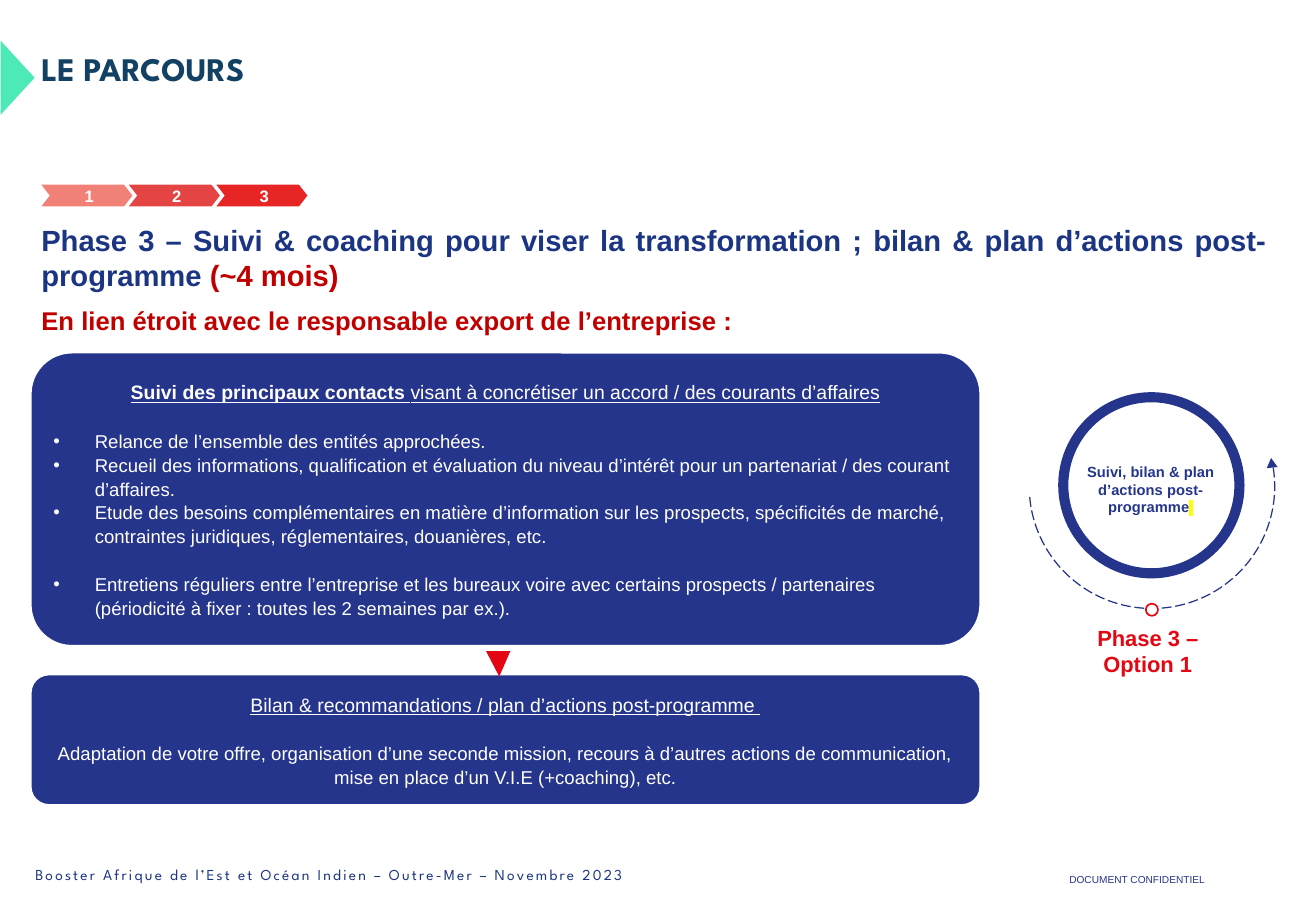
from lxml.etree import SubElement
from pptx import Presentation
from pptx.dml.color import RGBColor
from pptx.enum.dml import MSO_LINE
from pptx.enum.shapes import MSO_SHAPE
from pptx.enum.text import MSO_ANCHOR, PP_ALIGN
from pptx.oxml import parse_xml
from pptx.oxml.ns import nsdecls, qn
from pptx.util import Pt

NAVY, INK, RED, WHITE = "26358C", "1C3582", "E30613", "FFFFFF"
SPARTAN = "League Spartan"
CENTER, JUSTIFY, LEFT = PP_ALIGN.CENTER, PP_ALIGN.JUSTIFY, PP_ALIGN.LEFT


def color(value):
    return RGBColor.from_string(value)


class SlideBuilder:
    """Draw styled elements on one slide, with 100 px to the inch."""

    scale = 9144
    font_name = "Arial"

    def __init__(self, width, height):
        self.presentation = Presentation()
        self.presentation.slide_width = self.px(width)
        self.presentation.slide_height = self.px(height)
        self.slide = self.presentation.slides.add_slide(self.presentation.slide_layouts[6])

    def px(self, length):
        return length * self.scale

    def box(self, bounds):
        return [self.px(length) for length in bounds]

    def shape(self, kind, bounds, fill=None, line=None, line_width=1, adjustments=(), rotation=0):
        shape = self.slide.shapes.add_shape(kind, *self.box(bounds))
        shape.shadow.inherit = False
        shape.rotation = rotation
        for index, value in enumerate(adjustments):
            shape.adjustments[index] = value
        if fill:
            shape.fill.solid()
            shape.fill.fore_color.rgb = color(fill)
        else:
            shape.fill.background()
        if line:
            shape.line.color.rgb = color(line)
            shape.line.width = Pt(line_width)
        else:
            shape.line.fill.background()
        return shape

    def text(self, bounds, paragraphs, anchor=MSO_ANCHOR.TOP, margins=(0, 0, 0, 0)):
        textbox = self.slide.shapes.add_textbox(*self.box(bounds))
        self.fill_text(textbox, paragraphs, anchor, margins)

    def fill_text(self, shape, paragraphs, anchor=MSO_ANCHOR.MIDDLE, margins=(9, 9, 9, 9)):
        frame = shape.text_frame
        left, top, right, bottom = self.box(margins)
        frame_format = {
            "word_wrap": True, "vertical_anchor": anchor, "margin_left": left,
            "margin_top": top, "margin_right": right, "margin_bottom": bottom,
        }
        for name, value in frame_format.items():
            setattr(frame, name, value)
        for index, (runs, paragraph_format) in enumerate(paragraphs):
            paragraph = frame.add_paragraph() if index else frame.paragraphs[0]
            self.paragraph(paragraph, runs, **paragraph_format)

    def paragraph(self, paragraph, runs, bullet=False, **paragraph_format):
        if bullet:
            properties = paragraph._p.get_or_add_pPr()
            properties.set("marL", str(self.px(34)))
            properties.set("indent", str(-self.px(34)))
            SubElement(properties, qn("a:buFont")).set("typeface", self.font_name)
            SubElement(properties, qn("a:buChar")).set("char", "•")
        for name, value in paragraph_format.items():
            setattr(paragraph, name, value)
        for words, run_format in runs:
            self.run(paragraph, words, **run_format)

    def run(self, paragraph, words, size, ink, spacing=None, highlight=None, **font_format):
        run = paragraph.add_run()
        run.text = words
        run.font.color.rgb = color(ink)
        properties = run._r.get_or_add_rPr()
        if spacing:
            properties.set("spc", str(spacing))
        if highlight:
            properties.find(qn("a:solidFill")).addnext(parse_xml(
                f'<a:highlight {nsdecls("a")}><a:srgbClr val="{highlight}"/></a:highlight>'))
        for name, value in {"name": self.font_name, "size": Pt(size), **font_format}.items():
            setattr(run.font, name, value)

    def panel(self, bounds, paragraphs):
        panel = self.shape(MSO_SHAPE.ROUNDED_RECTANGLE, bounds, NAVY, WHITE, 1.5, [0.141])
        self.fill_text(panel, paragraphs)


def draw_header(builder):
    builder.shape(MSO_SHAPE.ISOSCELES_TRIANGLE, (-16, 50, 61, 28), "4DEAB7", rotation=90)
    title = {"size": 19.5, "ink": "134163", "name": SPARTAN, "bold": True}
    builder.text((34, 44, 791, 30), [([("LE PARCOURS", title)], {"line_spacing": 0.9})])
    for index, fill in enumerate(("F18077", "E44444", "E72525")):
        step = builder.shape(MSO_SHAPE.CHEVRON, (34 + 72 * index, 152, 75, 18), fill,
                             adjustments=[0.388])
        label = {"size": 9.8, "ink": WHITE, "bold": True}
        builder.fill_text(step, [([(str(index + 1), label)], {"alignment": CENTER})],
                          margins=(13, 5, 9, 5))
    heading = {"size": 17.3, "ink": INK, "bold": True}
    accent = {**heading, "ink": "C00000"}
    builder.text((34, 183, 1009, 95), [
        ([("Phase 3 – Suivi & coaching pour viser la transformation ; bilan & plan d’actions "
           "post-programme ", heading), ("(~4 mois)", accent)], {"alignment": JUSTIFY}),
        ([("En lien étroit avec le responsable export de l’entreprise :",
           {**accent, "size": 15.2})], {"alignment": JUSTIFY, "space_before": Pt(7.5)}),
    ])


def draw_panels(builder):
    heading = {"size": 11.5, "ink": WHITE, "underline": True}
    body = {"size": 11, "ink": WHITE}
    centered = {"alignment": CENTER, "line_spacing": 1.07}
    bullet = {"alignment": LEFT, "line_spacing": 1.07, "bullet": True}
    spaced = {"space_before": Pt(14.5)}
    builder.panel((25, 290, 782, 242), [
        ([("Suivi des principaux contacts ", {**heading, "bold": True}),
          ("visant à concrétiser un accord / des courants d’affaires", heading)], centered),
        ([("Relance de l’ensemble des entités approchées.", body)], {**bullet, **spaced}),
        ([("Recueil des informations, qualification et évaluation du niveau d’intérêt pour un "
           "partenariat / des courant d’affaires.", body)], bullet),
        ([("Etude des besoins complémentaires en matière d’information sur les prospects, "
           "spécificités de marché, contraintes juridiques, réglementaires, douanières, etc.",
           body)], bullet),
        ([("Entretiens réguliers entre l’entreprise et les bureaux voire avec certains prospects "
           "/ partenaires (périodicité à fixer : toutes les 2 semaines par ex.).", body)],
         {**bullet, **spaced}),
    ])
    builder.panel((25, 555, 782, 108), [
        ([("Bilan & recommandations / plan d’actions post-programme ", heading)], centered),
        ([("Adaptation de votre offre, organisation d’une seconde mission, recours à d’autres "
           "actions de communication, mise en place d’un V.I.E (+coaching), etc.", body)],
         {**centered, **spaced}),
    ])
    builder.shape(MSO_SHAPE.ISOSCELES_TRIANGLE, (400, 536, 20, 21), RED,
                  adjustments=[0.457], rotation=180)


def draw_cycle(builder):
    builder.shape(MSO_SHAPE.OVAL, (875, 327, 145, 145), WHITE, NAVY, 6)
    orbit = builder.shape(MSO_SHAPE.ARC, (847, 300, 202, 201), line=NAVY, line_width=0.75,
                          adjustments=[210.7, 105.5])
    orbit.line.dash_style = MSO_LINE.LONG_DASH
    label = {"size": 8.7, "ink": NAVY, "bold": True}
    builder.text((873, 381, 148, 44), [
        ([("Suivi, bilan & plan d’actions post-programme", label),
          (" ", {**label, "highlight": "FFFF00"})], {"alignment": CENTER}),
    ], MSO_ANCHOR.MIDDLE)
    builder.shape(MSO_SHAPE.OVAL, (943, 497, 10, 10), WHITE, RED)
    caption = {"size": 13, "ink": RED, "bold": True}
    builder.text((900, 508, 89, 55), [([("Phase 3 – Option 1", caption)], {"alignment": CENTER})],
                 MSO_ANCHOR.MIDDLE, (0, 6, 0, 6))
    builder.shape(MSO_SHAPE.ISOSCELES_TRIANGLE, (1042, 377, 9, 8), NAVY, rotation=353.7)


def draw_footer(builder):
    programme = {"size": 9, "ink": INK, "name": SPARTAN, "spacing": 130}
    builder.text((29, 712, 899, 20), [
        ([("Booster Afrique de l’Est et Océan Indien – Outre-Mer – Novembre 2023", programme)], {}),
    ])
    builder.text((880, 719, 113, 10), [
        ([("DOCUMENT CONFIDENTIEL", {"size": 6, "ink": NAVY})], {}),
    ])


def main():
    builder = SlideBuilder(1083, 750)
    for draw in (draw_footer, draw_header, draw_panels, draw_cycle):
        draw(builder)
    builder.presentation.save("out.pptx")


if __name__ == "__main__":
    main()
